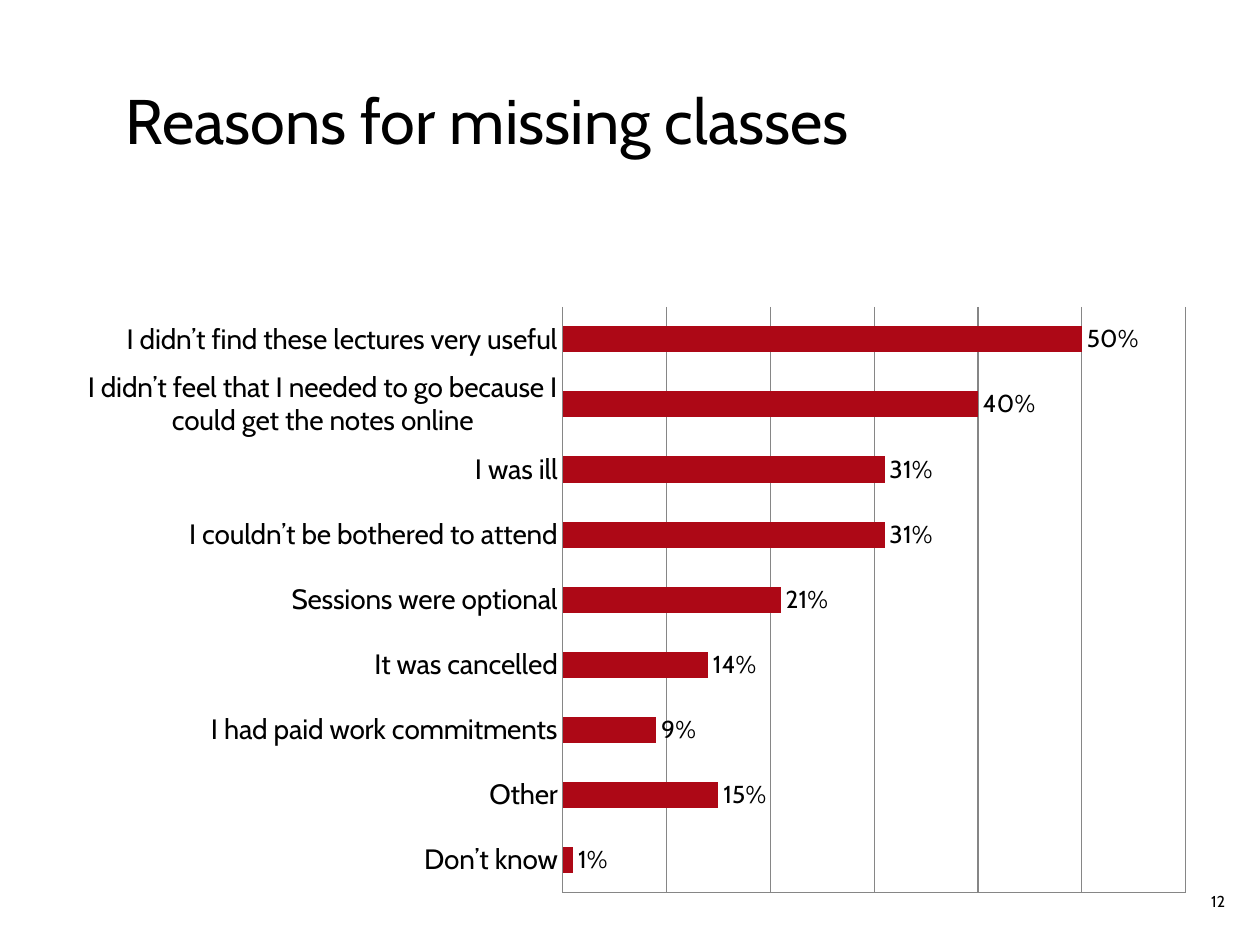
from lxml.etree import SubElement
from pptx import Presentation
from pptx.chart.data import CategoryChartData
from pptx.dml.color import RGBColor
from pptx.enum.chart import XL_CHART_TYPE, XL_LABEL_POSITION, XL_TICK_LABEL_POSITION, XL_TICK_MARK
from pptx.enum.text import MSO_ANCHOR, PP_ALIGN
from pptx.oxml.ns import qn
from pptx.util import Emu, Pt

# Content, from the top bar to the bottom bar
TITLE = "Reasons for missing classes"
PAGE_NUMBER = "12"
REASONS = [
    ("I didn’t find these lectures very useful", 0.5),
    ("I didn’t feel that I needed to go because I could get the notes online", 0.4),
    ("I was ill", 0.31),
    ("I couldn’t be bothered to attend", 0.31),
    ("Sessions were optional", 0.21),
    ("It was cancelled", 0.14),
    ("I had paid work commitments", 0.09),
    ("Other", 0.15),
    ("Don’t know", 0.01),
]


class Theme:
    font = "Cabin"
    text = RGBColor(0, 0, 0)
    bar = RGBColor(0xAD, 0x08, 0x16)
    line = RGBColor(0x86, 0x86, 0x86)
    title_size, category_size, value_size, number_size = 36, 16, 14, 9


def px(length):
    return Emu(length * 914400 // 126)


def style_font(font, size):
    font.name = Theme.font
    font.size = Pt(size)
    font.color.rgb = Theme.text


def add_text(slide, text, box, size, align=PP_ALIGN.LEFT, anchor=MSO_ANCHOR.MIDDLE, right_inset=13):
    frame = slide.shapes.add_textbox(*map(px, box)).text_frame
    frame.word_wrap = True
    frame.vertical_anchor = anchor
    frame.margin_right = px(right_inset)
    paragraph = frame.paragraphs[0]
    paragraph.alignment = align
    run = paragraph.add_run()
    run.text = text
    style_font(run.font, size)


def set_plot_layout(chart, **fractions):
    """Fix the inner plot area as fractions of the chart."""
    plot_area = chart._chartSpace.chart.plotArea
    for old_layout in plot_area.findall(qn("c:layout")):
        plot_area.remove(old_layout)
    layout = plot_area.makeelement(qn("c:layout"))
    plot_area.insert(0, layout)
    manual = SubElement(layout, qn("c:manualLayout"))
    settings = {"layoutTarget": "inner", "xMode": "edge", "yMode": "edge", **fractions}
    for name, value in settings.items():
        SubElement(manual, qn(f"c:{name}")).set("val", str(value))


def add_reason_chart(slide, box):
    data = CategoryChartData(number_format="0%")
    names, values = zip(*reversed(REASONS))
    data.categories = names
    data.add_series("Series 1", values)
    chart = slide.shapes.add_chart(XL_CHART_TYPE.BAR_CLUSTERED, *map(px, box), data).chart
    chart.has_legend = False
    chart.has_title = False
    style_font(chart.font, 10)
    set_plot_layout(chart, x=0.455, y=0.119, w=0.537, h=0.842)

    # Axes
    category_axis, value_axis = chart.category_axis, chart.value_axis
    for axis in (category_axis, value_axis):
        axis.major_tick_mark = axis.minor_tick_mark = XL_TICK_MARK.NONE
        axis.format.line.color.rgb = Theme.line
    style_font(category_axis.tick_labels.font, Theme.category_size)
    value_axis.tick_label_position = XL_TICK_LABEL_POSITION.NONE
    value_axis.minimum_scale, value_axis.maximum_scale, value_axis.major_unit = 0, 0.6, 0.1
    value_axis.major_gridlines.format.line.color.rgb = Theme.line

    # Bars and their labels
    plot = chart.plots[0]
    plot.gap_width = 150
    plot.vary_by_categories = False
    series = plot.series[0]
    series.format.fill.solid()
    series.format.fill.fore_color.rgb = Theme.bar
    labels = series.data_labels
    labels.show_value = True
    labels.position = XL_LABEL_POSITION.OUTSIDE_END
    labels.number_format = "0%"
    labels.number_format_is_linked = False
    style_font(labels.font, Theme.value_size)


def main():
    presentation = Presentation()
    presentation.slide_width, presentation.slide_height = px(1260), px(945)
    slide = presentation.slides.add_slide(presentation.slide_layouts[6])
    add_text(slide, PAGE_NUMBER, (1166, 876, 59, 50), Theme.number_size,
             align=PP_ALIGN.RIGHT, right_inset=0)
    add_text(slide, TITLE, (113, 66, 1131, 97), Theme.title_size, anchor=MSO_ANCHOR.BOTTOM)
    add_reason_chart(slide, (35, 224, 1160, 696))
    presentation.save("out.pptx")


if __name__ == "__main__":
    main()
